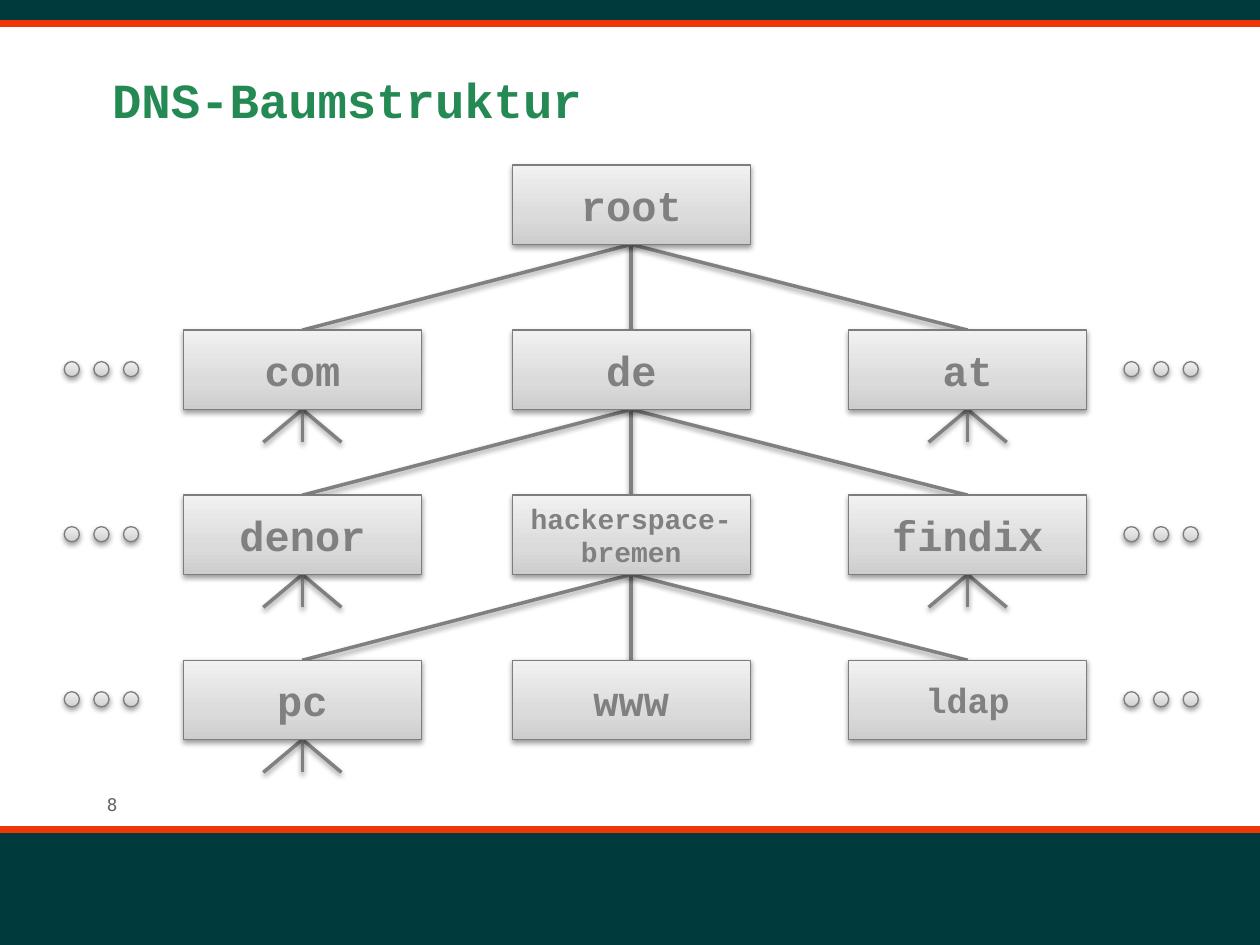
from pptx import Presentation
from pptx.dml.color import RGBColor
from pptx.enum.shapes import MSO_CONNECTOR, MSO_SHAPE
from pptx.enum.text import MSO_ANCHOR, MSO_AUTO_SIZE, PP_ALIGN
from pptx.oxml import parse_xml
from pptx.oxml.ns import nsdecls
from pptx.util import Inches, Pt

# Grid of the tree, in inches
MIDS = (2.4, 5.01, 7.68)
PITCH = 1.31
WIDE, HIGH = 1.89, 0.63

# Rows of the tree: column, name, text size
TREE = (
    ((1, "root", 24),),
    ((0, "com", 24), (1, "de", 24), (2, "at", 24)),
    ((0, "denor", 24), (1, "hackerspace-\nbremen", 16), (2, "findix", 24)),
    ((0, "pc", 24), (1, "www", 24), (2, "ldap", 20)),
)
FANS = ((0, 1), (2, 1), (0, 2), (2, 2), (0, 3))

STOPS = ((0, "CDCDCD"), (35, "DBDBDB"), (100, "F1F1F1"))


def hue(code):
    return RGBColor.from_string(code)


def top(row):
    return PITCH * (row + 1)


def foot(row):
    return top(row) + HIGH


def write(frame, text, size=24, font="Courier New", color="808080",
          bold=True, align=PP_ALIGN.CENTER, anchor=MSO_ANCHOR.MIDDLE):
    frame.word_wrap = True
    frame.auto_size = MSO_AUTO_SIZE.NONE
    frame.vertical_anchor = anchor
    para = frame.paragraphs[0]
    para.text = text
    para.alignment = align
    para.font.size = Pt(size)
    para.font.name = font
    para.font.bold = bold
    para.font.color.rgb = hue(color)


def shade(props, on=True):
    glow = ('<a:outerShdw blurRad="40000" dist="20000" dir="5400000" '
            'rotWithShape="0"><a:srgbClr val="000000">'
            '<a:alpha val="38000"/></a:srgbClr></a:outerShdw>') if on else ""
    props.append(parse_xml(f'<a:effectLst {nsdecls("a")}>{glow}</a:effectLst>'))


def blend(props):
    stops = "".join(f'<a:gs pos="{pos * 1000}"><a:srgbClr val="{code}"/></a:gs>'
                    for pos, code in STOPS)
    props.insert(2, parse_xml(
        f'<a:gradFill {nsdecls("a")} rotWithShape="1"><a:gsLst>{stops}</a:gsLst>'
        '<a:lin ang="16200000" scaled="0"/></a:gradFill>'))


class Deck:
    ink, edge = "808080", "7D7D7D"
    dark, red, green = "003A3D", "EE3709", "258954"

    def __init__(self, show):
        self.slide = show.slides.add_slide(show.slide_layouts[5])
        self.shapes = self.slide.shapes

    def group(self):
        return self.shapes.add_group_shape().shapes

    def line(self, x1, y1, x2, y2, color=ink, width=2, shadow=True, into=None):
        link = (into or self.shapes).add_connector(
            MSO_CONNECTOR.STRAIGHT, *map(Inches, (x1, y1, x2, y2)))
        link.line.color.rgb = hue(color)
        link.line.width = Pt(width)
        shade(link._element.spPr, shadow)

    def bar(self, y, high, rule):
        band = self.shapes.add_shape(
            MSO_SHAPE.RECTANGLE, *map(Inches, (0, y, 10, high)))
        band.shadow.inherit = False
        band.fill.solid()
        band.fill.fore_color.rgb = band.line.color.rgb = hue(self.dark)
        band.line.width = Pt(0.75)
        self.line(0, rule, 10, rule, self.red, 4, False)

    def gloss(self, kind, x, y, wide, high, into=None):
        shape = (into or self.shapes).add_shape(
            kind, *map(Inches, (x, y, wide, high)))
        blend(shape._element.spPr)
        shape.line.color.rgb = hue(self.edge)
        shape.line.width = Pt(0.75)
        shade(shape._element.spPr)
        return shape

    def node(self, col, row, name, size):
        box = self.gloss(MSO_SHAPE.RECTANGLE, MIDS[col] - WIDE / 2, top(row),
                         WIDE, HIGH)
        write(box.text_frame, name, size=size)

    def fan(self, col, row):
        into, x, y = self.group(), MIDS[col], foot(row)
        for step in (0.31, -0.31, 0):
            self.line(x, y, x + step, y + 0.26, into=into)

    def dots(self, x, row):
        into = self.group()
        for i in range(3):
            self.gloss(MSO_SHAPE.OVAL, x + 0.235 * i, top(row) + 0.25,
                       0.12, 0.12, into)

    def title(self, text):
        head = self.shapes.title
        head.left, head.top, head.width, head.height = map(
            Inches, (0.79, 0.43, 8.5, 0.99))
        head.text_frame.margin_top = Inches(0.12)
        write(head.text_frame, text, size=28, color=self.green,
              align=PP_ALIGN.LEFT, anchor=MSO_ANCHOR.TOP)

    def number(self, text):
        box = self.shapes.add_textbox(*map(Inches, (0.75, 6.25, 2.92, 0.27)))
        write(box.text_frame, text, size=10, font="DejaVu Sans Mono",
              color="646464", bold=False, align=PP_ALIGN.LEFT)


def main():
    show = Presentation()
    show.slide_width, show.slide_height = Inches(10), Inches(7.5)
    deck = Deck(show)

    # Frame and title
    deck.number("8")
    deck.bar(6.58, 0.92, 6.58)
    deck.bar(0, 0.17, 0.19)
    deck.title("DNS-Baumstruktur")

    # Branches from each middle node to the row below
    for row in range(3):
        for col in (1, 2, 0):
            deck.line(MIDS[1], foot(row), MIDS[col], top(row + 1))
    for col, row in FANS:
        deck.fan(col, row)

    # Nodes
    for row, nodes in enumerate(TREE):
        for col, name, size in nodes:
            deck.node(col, row, name, size)

    # Dots for further siblings
    for x in (8.92, 0.51):
        for row in (1, 2, 3):
            deck.dots(x, row)

    show.save("out.pptx")


if __name__ == "__main__":
    main()
